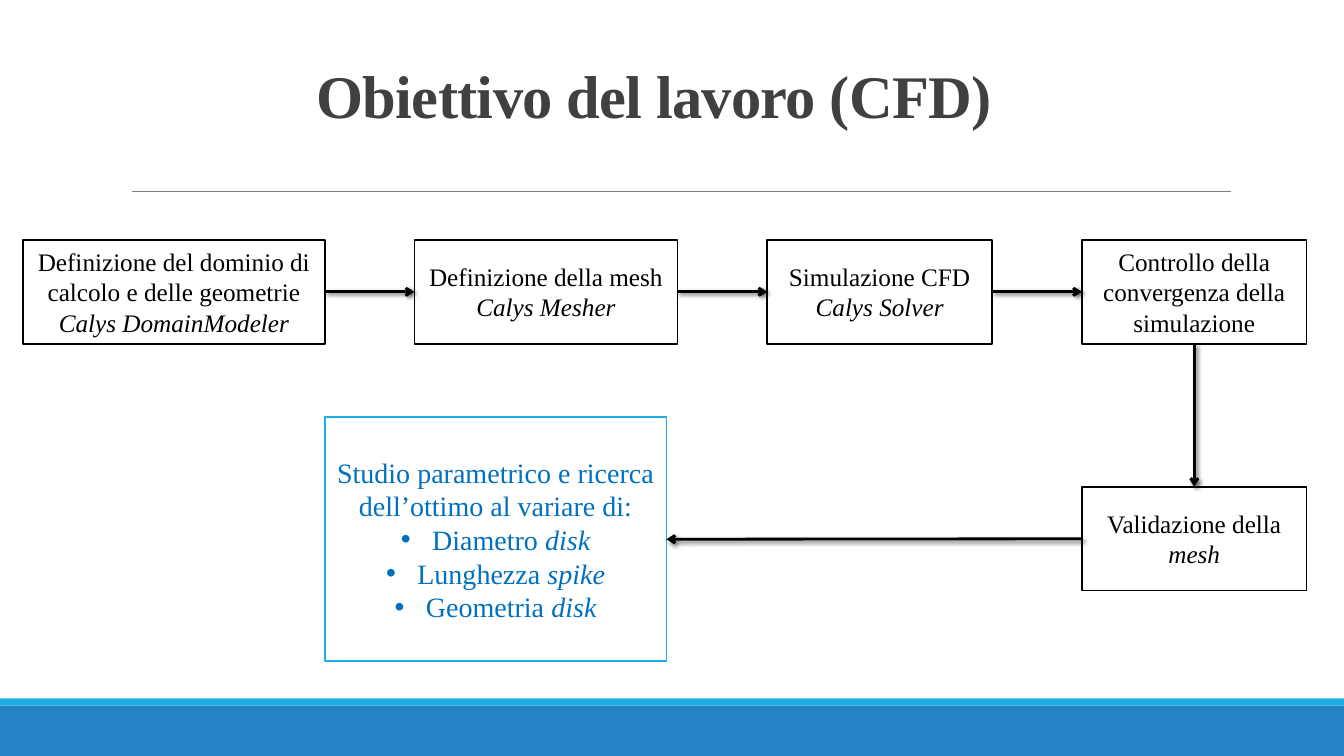
import pptx
import pptx.dml.color
import pptx.enum.shapes
import pptx.enum.text
import pptx.oxml
import pptx.oxml.ns
import pptx.util

Inches = pptx.util.Inches
Pt = pptx.util.Pt
ALIGN = pptx.enum.text.PP_ALIGN
ANCHOR = pptx.enum.text.MSO_ANCHOR

COLORS = {
    "white": "FFFFFF",
    "black": "000000",
    "title": "404040",
    "rule": "808080",
    "band": "2683C6",
    "accent": "1CADE4",
    "study": "0070C0",
}
FONT = "Times New Roman"
TOP, LEFT, BOTTOM, RIGHT = range(4)
STEP_HEIGHT = 1.03
FIRST_ROW, SECOND_ROW = 2.38, 4.83
NAMESPACE = pptx.oxml.ns.nsdecls("a")


def rgb(name):
    return pptx.dml.color.RGBColor.from_string(COLORS[name])


def add_run(paragraph, text, size, color, bold=False, italic=False):
    run = paragraph.add_run()
    run.text = text
    run.font.name = FONT
    run.font.size = Pt(size)
    run.font.color.rgb = rgb(color)
    run.font.bold = bold
    run.font.italic = italic
    return run


def add_rectangle(slide, left, top, width, height, fill, line=None):
    rectangle = slide.shapes.add_shape(
        pptx.enum.shapes.MSO_SHAPE.RECTANGLE,
        Inches(left), Inches(top), Inches(width), Inches(height))
    rectangle.shadow.inherit = False
    rectangle.fill.solid()
    rectangle.fill.fore_color.rgb = rgb(fill)
    if line:
        rectangle.line.color.rgb = rgb(line)
        rectangle.line.width = Pt(1.25)
    else:
        rectangle.line.fill.background()
    return rectangle


def add_bullet(paragraph):
    properties = paragraph._p.get_or_add_pPr()
    properties.set("marL", str(Inches(0.31)))
    properties.set("indent", str(Inches(-0.31)))
    properties.append(pptx.oxml.parse_xml(f'<a:buFont {NAMESPACE} typeface="Arial"/>'))
    properties.append(pptx.oxml.parse_xml(f'<a:buChar {NAMESPACE} char="•"/>'))


def add_box(slide, place, paragraphs, size=18, color="black", line="black", bullets_from=None):
    box = add_rectangle(slide, *place, "white", line)
    frame = box.text_frame
    frame.word_wrap = True
    frame.vertical_anchor = ANCHOR.MIDDLE
    for index, (plain, italic) in enumerate(paragraphs):
        paragraph = frame.add_paragraph() if index else frame.paragraphs[0]
        paragraph.alignment = ALIGN.CENTER
        if bullets_from is not None and index >= bullets_from:
            add_bullet(paragraph)
        if plain:
            add_run(paragraph, plain, size, color)
        if italic:
            add_run(paragraph, italic, size, color, italic=True)
    return box


def add_line(slide, start, end, color, width):
    line = slide.shapes.add_connector(
        pptx.enum.shapes.MSO_CONNECTOR.STRAIGHT, *map(Inches, start + end))
    line.line.color.rgb = rgb(color)
    line.line.width = Pt(width)
    effects = pptx.oxml.parse_xml(f"<a:effectLst {NAMESPACE}/>")
    line._element.spPr.append(effects)
    return line, effects


def add_arrow(slide, source, source_side, target, target_side):
    arrow, effects = add_line(slide, (0, 0), (1, 1), "black", 2)
    arrow.begin_connect(source, source_side)
    arrow.end_connect(target, target_side)
    arrow.line._get_or_add_ln().append(
        pptx.oxml.parse_xml(f'<a:tailEnd {NAMESPACE} type="arrow"/>'))
    effects.append(pptx.oxml.parse_xml(
        f'<a:outerShdw {NAMESPACE} blurRad="{Pt(3)}" dist="{Pt(2)}" dir="{45 * 60000}">'
        f'<a:srgbClr val="{COLORS["black"]}"><a:alpha val="60000"/></a:srgbClr>'
        "</a:outerShdw>"))


def set_title(slide, text):
    title = slide.shapes.title
    title.left, title.top = Inches(3.04), Inches(0.53)
    title.width, title.height = Inches(7.35), Inches(0.82)
    frame = title.text_frame
    frame.auto_size = pptx.enum.text.MSO_AUTO_SIZE.NONE
    frame.word_wrap = True
    frame.vertical_anchor = ANCHOR.BOTTOM
    heading = frame.paragraphs[0]
    heading.alignment = ALIGN.LEFT
    heading.line_spacing = 0.85
    run = add_run(heading, text, 43.2, "title", bold=True)
    run._r.get_or_add_rPr().set("spc", "-50")


def main():
    deck = pptx.Presentation()
    deck.slide_width, deck.slide_height = Inches(13.33), Inches(7.5)
    slide = deck.slides.add_slide(deck.slide_layouts[5])

    add_rectangle(slide, 0, 7, 13.33, 0.5, "band")
    add_rectangle(slide, 0, 6.93, 13.33, 0.07, "accent")
    add_line(slide, (1.31, 1.9), (12.21, 1.9), "rule", 0.5)
    set_title(slide, "Obiettivo del lavoro (CFD)")

    first_row = [
        (0.23, 2.99, [("Definizione del dominio di calcolo e delle geometrie", ""),
                      ("", "Calys DomainModeler")]),
        (4.11, 2.61, [("Definizione della mesh", ""), ("", "Calys Mesher")]),
        (7.61, 2.23, [("Simulazione CFD", ""), ("", "Calys Solver")]),
        (10.73, 2.23, [("Controllo della convergenza della simulazione", "")]),
    ]
    steps = [add_box(slide, (left, FIRST_ROW, width, STEP_HEIGHT), paragraphs)
             for left, width, paragraphs in first_row]
    validation = add_box(slide, (10.73, SECOND_ROW, 2.23, STEP_HEIGHT),
                         [("Validazione della ", "mesh")])
    study = add_box(
        slide, (3.22, 4.14, 3.39, 2.42),
        [("Studio parametrico e ricerca dell’ottimo al variare di:", ""),
         ("Diametro ", "disk"), ("Lunghezza ", "spike"), ("Geometria ", "disk")],
        size=20, color="study", line="accent", bullets_from=1)

    for source, target in zip(steps, steps[1:]):
        add_arrow(slide, source, RIGHT, target, LEFT)
    add_arrow(slide, steps[-1], BOTTOM, validation, TOP)
    add_arrow(slide, validation, LEFT, study, RIGHT)

    deck.save("out.pptx")


if __name__ == "__main__":
    main()
